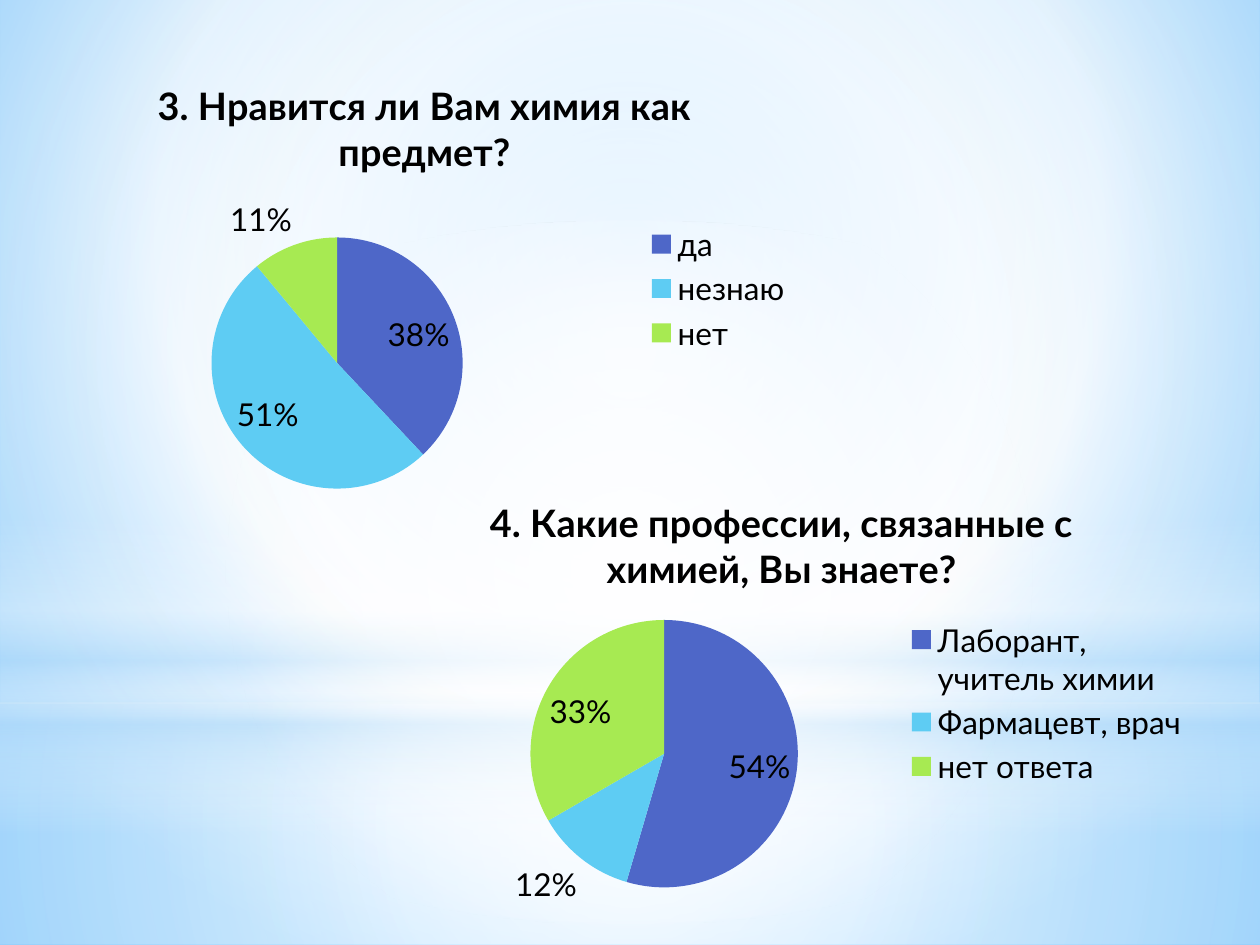
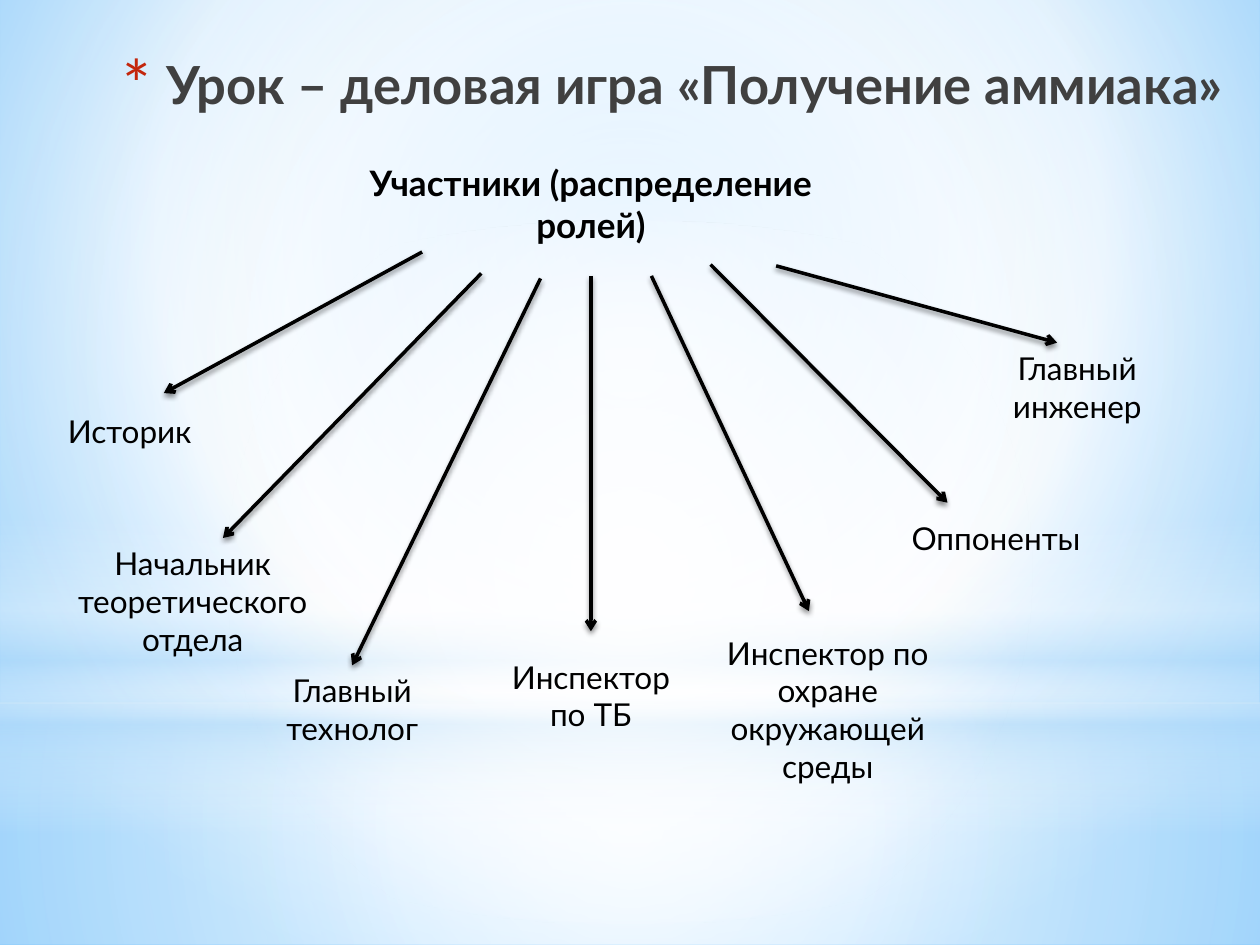
from dataclasses import dataclass

from lxml import etree
from pptx import Presentation
from pptx import util as u
from pptx.chart import data as chart_data
from pptx.dml import color
from pptx.enum import chart as chart_enum
from pptx.enum import shapes, text
from pptx.oxml.ns import qn


@dataclass(frozen=True)
class Theme:
    font: str = "Lato"
    black: str = "000000"
    white: str = "FFFFFF"
    haze: str = "B4DCFA"
    sky: str = "9ED5FF"
    deep_sky: str = "5BB9FF"
    title_grey: str = "404040"
    title_navy: str = "212745"
    bullet: str = "C3260C"
    slices: tuple = ("4E67C8", "5ECCF3", "A7EA52")
    title_size: float = 30
    chart_title_size: float = 21.6
    heading_size: float = 20
    body_size: float = 18
    arrow_width: float = 2


@dataclass(frozen=True)
class Box:
    left: float
    top: float
    width: float
    height: float

    def inches(self):
        return [u.Inches(n) for n in (self.left, self.top, self.width, self.height)]

    def inside(self, left, top, width, height):
        return Box(self.left + left, self.top + top, width, height)


THEME = Theme()
SLIDE = Box(0, 0, 10, 7.5)


def rgb(value):
    return color.RGBColor.from_string(value)


def add_element(parent, tag, **attributes):
    values = {name: str(value) for name, value in attributes.items()}
    return etree.SubElement(parent, qn(tag), values)


def add_color(parent, value, opacity=100):
    element = add_element(parent, "a:srgbClr", val=value)
    if opacity < 100:
        add_element(element, "a:alpha", val=opacity * 1000)


def set_gradient(owner, fill, stops, focus=None):
    fill.gradient()
    gradient = next(owner.element.iter(qn("a:gradFill")))
    gradient.clear()
    stop_list = add_element(gradient, "a:gsLst")
    for position, *shade in stops:
        add_color(add_element(stop_list, "a:gs", pos=position * 1000), *shade)
    if focus:
        circle = add_element(gradient, "a:path", path="circle")
        sides = {side: n * 1000 for side, n in zip("ltrb", focus)}
        add_element(circle, "a:fillToRect", **sides)
    else:
        add_element(gradient, "a:lin", ang=5400000, scaled=0)


def format_font(font, size, bold=False):
    font.name = THEME.font
    font.size = u.Pt(size)
    font.bold = bold
    font.color.rgb = rgb(THEME.black)


def draw_backdrop(master, slide):
    white, haze = THEME.white, THEME.haze
    centre = (50, 50, 50, 50)
    rectangle, oval = shapes.MSO_SHAPE.RECTANGLE, shapes.MSO_SHAPE.OVAL
    set_gradient(master, master.background.fill,
                 [(0, THEME.sky), (60, white), (100, THEME.deep_sky)], (20, 10, 20, 60))
    bands = [
        (rectangle, Box(0, 5.58, 10, 1.92),
         [(0, white, 91), (37, white, 76), (100, haze, 79)], centre),
        (rectangle, Box(0, 0, 10, 5.58),
         [(0, white, 89), (48, white, 62), (100, haze, 79)], centre),
        (rectangle, Box(0, 4.12, 10, 2.5),
         [(0, white, 0), (29, white, 30), (45, haze, 40),
          (55, white, 26), (65, haze, 60), (100, white, 0)], None),
        (oval, Box(0, 1.75, 10, 5.58), [(0, white), (56, white, 0)], centre),
    ]
    for index, (kind, box, stops, focus) in enumerate(bands):
        band = slide.shapes.add_shape(kind, *box.inches())
        band.shadow.inherit = False
        band.line.fill.background()
        set_gradient(band, band.fill, stops, focus)
        next(band.element.iter(qn("p:cNvPr"))).set("id", str(100 + index))
        master.shapes.element.insert(2 + index, band.element)


def place_pie(chart, pie):
    plot_area = next(chart.element.iter(qn("c:plotArea")))
    for old_layout in plot_area.findall(qn("c:layout")):
        plot_area.remove(old_layout)
    layout = etree.Element(qn("c:layout"))
    plot_area.insert(0, layout)
    manual = add_element(layout, "c:manualLayout")
    add_element(manual, "c:layoutTarget", val="inner")
    for mode in ("xMode", "yMode"):
        add_element(manual, f"c:{mode}", val="edge")
    for name, fraction in zip("xywh", pie):
        add_element(manual, f"c:{name}", val=fraction)


def draw_survey(slide, box, question, answers, pie):
    data = chart_data.CategoryChartData()
    data.categories = list(answers)
    data.add_series("Series 1", list(answers.values()))
    frame = slide.shapes.add_chart(chart_enum.XL_CHART_TYPE.PIE, *box.inches(), data)
    chart = frame.chart
    format_font(chart.font, THEME.body_size)
    chart.has_title = True
    title = chart.chart_title.text_frame
    title.text = question
    format_font(title.paragraphs[0].runs[0].font, THEME.chart_title_size, True)
    chart.has_legend = True
    chart.legend.position = chart_enum.XL_LEGEND_POSITION.RIGHT
    chart.legend.include_in_layout = False
    format_font(chart.legend.font, THEME.body_size)
    plot = chart.plots[0]
    plot.vary_by_categories = True
    for index, shade in enumerate(THEME.slices):
        fill = plot.series[0].points[index].format.fill
        fill.solid()
        fill.fore_color.rgb = rgb(shade)
    plot.has_data_labels = True
    labels = plot.data_labels
    labels.show_value = True
    labels.number_format = '0"%"'
    labels.number_format_is_linked = False
    labels.position = chart_enum.XL_LABEL_POSITION.BEST_FIT
    format_font(labels.font, THEME.body_size)
    place_pie(chart, pie)


def draw_title(slide, box, wording):
    title = slide.shapes.title
    title.left, title.top, title.width, title.height = box.inches()
    frame = title.text_frame
    frame.text = wording
    frame.word_wrap = True
    frame.auto_size = text.MSO_AUTO_SIZE.NONE
    frame.vertical_anchor = text.MSO_ANCHOR.TOP
    paragraph = frame.paragraphs[0]
    paragraph.alignment = text.PP_ALIGN.RIGHT
    font = paragraph.runs[0].font
    format_font(font, THEME.title_size, True)
    set_gradient(title, font.fill, [(0, THEME.black), (40, THEME.title_grey),
                                    (100, THEME.title_navy, 65)])
    properties = next(title.element.iter(qn("a:pPr")))
    indent = u.Inches(0.35)
    properties.set("marL", str(indent))
    properties.set("indent", str(-indent))
    add_color(add_element(properties, "a:buClr"), THEME.bullet)
    add_element(properties, "a:buSzPct", val=128000)
    add_element(properties, "a:buFont", typeface=THEME.font)
    add_element(properties, "a:buChar", char="*")


def draw_label(slide, box, wording, size, bold=False):
    label = slide.shapes.add_textbox(*box.inches())
    frame = label.text_frame
    frame.word_wrap = True
    frame.auto_size = text.MSO_AUTO_SIZE.SHAPE_TO_FIT_TEXT
    frame.text = wording
    paragraph = frame.paragraphs[0]
    paragraph.alignment = text.PP_ALIGN.CENTER
    format_font(paragraph.runs[0].font, size, bold)
    return label


def draw_arrow(slide, box, start, end):
    points = [u.Inches(n) for x, y in (start, end) for n in (box.left + x, box.top + y)]
    arrow = slide.shapes.add_connector(shapes.MSO_CONNECTOR.STRAIGHT, *points)
    arrow.line.color.rgb = rgb(THEME.black)
    arrow.line.width = u.Pt(THEME.arrow_width)
    add_element(next(arrow.element.iter(qn("a:ln"))), "a:tailEnd", type="arrow")
    effects = add_element(next(arrow.element.iter(qn("p:spPr"))), "a:effectLst")
    shadow = add_element(effects, "a:outerShdw", blurRad=u.Pt(3.1), dist=u.Pt(1.8),
                         dir=5400000, rotWithShape=0)
    add_color(shadow, THEME.black, 45)
    return arrow


def draw_roles(slide, box, heading, roles):
    draw_label(slide, box.inside(2.8, 0, 3.78, 0.77), heading, THEME.heading_size, True)
    for role, place, start, end in roles:
        label = draw_label(slide, box.inside(*place), role, THEME.body_size)
        arrow = draw_arrow(slide, box, start, end)
        left, top, width, _ = place
        if abs(left + width / 2 - end[0]) < 0.01 and abs(top - end[1]) < 0.01:
            arrow.end_connect(label, 0)


def build_survey_slide(slide, box):
    draw_survey(slide, box.inside(0.35, 0.44, 6.04, 3.7),
                "3. Нравится ли Вам химия как предмет?",
                {"да": 38, "незнаю": 51, "нет": 11}, (0.22, 0.39, 0.33, 0.54))
    draw_survey(slide, box.inside(2.87, 3.75, 6.67, 3.66),
                "4. Какие профессии, связанные с химией, Вы знаете?",
                {"Лаборант, учитель химии": 54, "Фармацевт, врач": 12, "нет ответа": 33},
                (0.2, 0.32, 0.32, 0.58))


def build_game_slide(slide, box):
    draw_title(slide, box.inside(0.12, 0.36, 9.69, 0.86),
               "Урок – деловая игра «Получение аммиака»")
    roles = [
        ("Историк", (0.28, 1.99, 1.5, 0.4), (3.35, 0.77), (1.3, 1.89)),
        ("Начальник теоретического отдела", (0.43, 3.04, 2.2, 1.01),
         (3.82, 0.94), (1.77, 3.04)),
        ("Главный технолог", (1.89, 4.05, 1.81, 0.71), (4.29, 0.98), (2.8, 4.05)),
        ("Инспектор по ТБ", (3.82, 3.94, 1.74, 0.71), (4.69, 0.96), (4.69, 3.78)),
        ("Инспектор по охране окружающей среды", (5.54, 3.75, 2.06, 1.31),
         (5.17, 0.96), (6.42, 3.62)),
        ("Оппоненты", (6.92, 2.84, 1.97, 0.4), (5.64, 0.87), (7.52, 2.76)),
        ("Главный инженер", (7.68, 1.49, 1.74, 0.71), (6.16, 0.88), (8.39, 1.49)),
    ]
    draw_roles(slide, box.inside(0, 1.23, 10, 5.06), "Участники (распределение ролей)", roles)


def main():
    presentation = Presentation()
    presentation.slide_width = u.Inches(SLIDE.width)
    presentation.slide_height = u.Inches(SLIDE.height)
    title_only, blank = presentation.slide_layouts[5], presentation.slide_layouts[6]
    survey_slide = presentation.slides.add_slide(blank)
    draw_backdrop(presentation.slide_master, survey_slide)
    build_survey_slide(survey_slide, SLIDE)
    build_game_slide(presentation.slides.add_slide(title_only), SLIDE)
    presentation.save("out.pptx")


if __name__ == "__main__":
    main()
